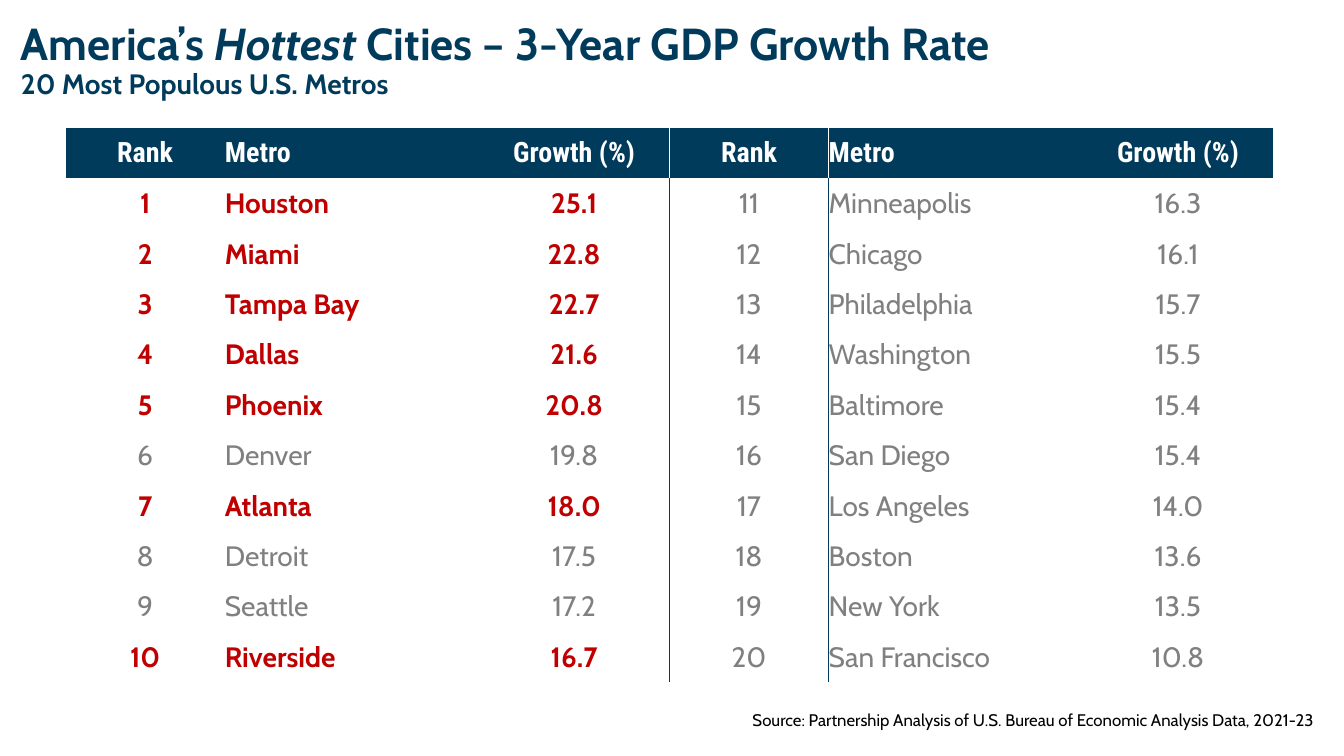
from dataclasses import dataclass
from lxml import etree
from pptx import Presentation
from pptx.dml.color import RGBColor
from pptx.enum.text import MSO_ANCHOR, MSO_AUTO_SIZE, PP_ALIGN
from pptx.oxml.ns import qn
from pptx.util import Inches, Pt

CENTER, LEFT, RIGHT = PP_ALIGN.CENTER, PP_ALIGN.LEFT, PP_ALIGN.RIGHT
MIDDLE, TOP = MSO_ANCHOR.MIDDLE, MSO_ANCHOR.TOP
FIT_SHAPE = MSO_AUTO_SIZE.SHAPE_TO_FIT_TEXT

TITLE = [("America’s ", False), ("Hottest", True), (" Cities – 3-Year GDP Growth Rate", False)]
SUBTITLE = "20 Most Populous U.S. Metros"
SOURCE = "Source: Partnership Analysis of U.S. Bureau of Economic Analysis Data, 2021-23"
HEADERS = ("Rank", "Metro", "Growth (%)")
METROS = [
    ("Houston", "25.1"), ("Miami", "22.8"), ("Tampa Bay", "22.7"), ("Dallas", "21.6"),
    ("Phoenix", "20.8"), ("Denver", "19.8"), ("Atlanta", "18.0"), ("Detroit", "17.5"),
    ("Seattle", "17.2"), ("Riverside", "16.7"), ("Minneapolis", "16.3"), ("Chicago", "16.1"),
    ("Philadelphia", "15.7"), ("Washington", "15.5"), ("Baltimore", "15.4"), ("San Diego", "15.4"),
    ("Los Angeles", "14.0"), ("Boston", "13.6"), ("New York", "13.5"), ("San Francisco", "10.8"),
]
HOT = {"Houston", "Miami", "Tampa Bay", "Dallas", "Phoenix", "Atlanta", "Riverside"}


@dataclass(frozen=True)
class Theme:
    navy: str = "003B5C"
    red: str = "C00000"
    gray: str = "808080"
    white: str = "FFFFFF"
    black: str = "000000"
    body_font: str = "Cabin"
    head_font: str = "Roboto Condensed"
    title: int = 32
    body: int = 20
    note: int = 12
    no_grid: str = "{2D5ABB26-0587-4C30-8999-92F81FD0307C}"


T = Theme()
SLIDE_W, SLIDE_H = 13.33, 7.5
TABLE_X, TABLE_Y, ROW_H = 0.65, 1.27, 0.5
HALF_COLS = (1.58, 2.52, 1.89)
ALIGNS = (CENTER, LEFT, CENTER)
PER_HALF = len(METROS) // 2


def set_font(p, size, color, bold=False, name=T.body_font):
    f = p.font
    f.name, f.size, f.bold = name, Pt(size), bold
    f.color.rgb = RGBColor.from_string(color)


def add_box(s, x, y, w, h, anchor):
    tf = s.shapes.add_textbox(Inches(x), Inches(y), Inches(w), Inches(h)).text_frame
    tf.word_wrap = True
    tf.vertical_anchor = anchor
    return tf


def add_border(cell, side, color):
    ln = etree.Element(qn(f"a:ln{side}"), w=str(Pt(1)))
    fill = etree.SubElement(ln, qn("a:solidFill"))
    etree.SubElement(fill, qn("a:srgbClr"), val=color)
    cell._tc.get_or_add_tcPr().insert(0, ln)


def fill_cell(cell, text, align, background, **font):
    cell.margin_left = cell.margin_right = cell.margin_top = cell.margin_bottom = 0
    cell.vertical_anchor = MIDDLE
    cell.fill.solid()
    cell.fill.fore_color.rgb = RGBColor.from_string(background)
    p = cell.text_frame.paragraphs[0]
    p.text = text
    p.alignment = align
    set_font(p, T.body, **font)


def add_ranking(s):
    n = len(HALF_COLS)
    rows = PER_HALF + 1
    frame = s.shapes.add_table(rows, 2 * n, Inches(TABLE_X), Inches(TABLE_Y),
                               Inches(2 * sum(HALF_COLS)), Inches(rows * ROW_H))
    table = frame.table
    table.first_row = table.horz_banding = False
    table._tbl.tblPr.find(qn("a:tableStyleId")).text = T.no_grid
    for col, width in zip(table.columns, HALF_COLS * 2):
        col.width = Inches(width)
    for row in table.rows:
        row.height = Inches(ROW_H)
    for half in range(2):
        for r in range(rows):
            if r == 0:
                values, background, divider = HEADERS, T.navy, T.white
                font = dict(color=T.white, bold=True, name=T.head_font)
            else:
                rank = half * PER_HALF + r
                metro, growth = METROS[rank - 1]
                hot = metro in HOT
                values, background, divider = (str(rank), metro, growth), T.white, T.navy
                font = dict(color=T.red if hot else T.gray, bold=hot)
            for c, (value, align) in enumerate(zip(values, ALIGNS)):
                fill_cell(table.cell(r, half * n + c), value, align, background, **font)
            if half == 0:
                add_border(table.cell(r, n - 1), "R", divider)
            else:
                add_border(table.cell(r, n), "L", divider)


def add_heading(s):
    tf = add_box(s, 0.11, 0.29, 13.03, 0.88, MIDDLE)
    tf.margin_bottom = Inches(0.29)
    p = tf.paragraphs[0]
    for text, italic in TITLE:
        r = p.add_run()
        r.text = text
        r.font.italic = italic
    sub = tf.add_paragraph()
    sub.text = SUBTITLE
    for para, size in ((p, T.title), (sub, T.body)):
        para.line_spacing = 0.9
        set_font(para, size, T.navy, True)


def add_source(s):
    tf = add_box(s, SLIDE_W / 2, 6.99, 6.47, 0.3, TOP)
    tf.auto_size = FIT_SHAPE
    p = tf.paragraphs[0]
    p.text = SOURCE
    p.alignment = RIGHT
    set_font(p, T.note, T.black)


def main():
    prs = Presentation()
    prs.slide_width, prs.slide_height = Inches(SLIDE_W), Inches(SLIDE_H)
    s = prs.slides.add_slide(prs.slide_layouts[6])
    add_ranking(s)
    add_source(s)
    add_heading(s)
    prs.save("out.pptx")


if __name__ == "__main__":
    main()
